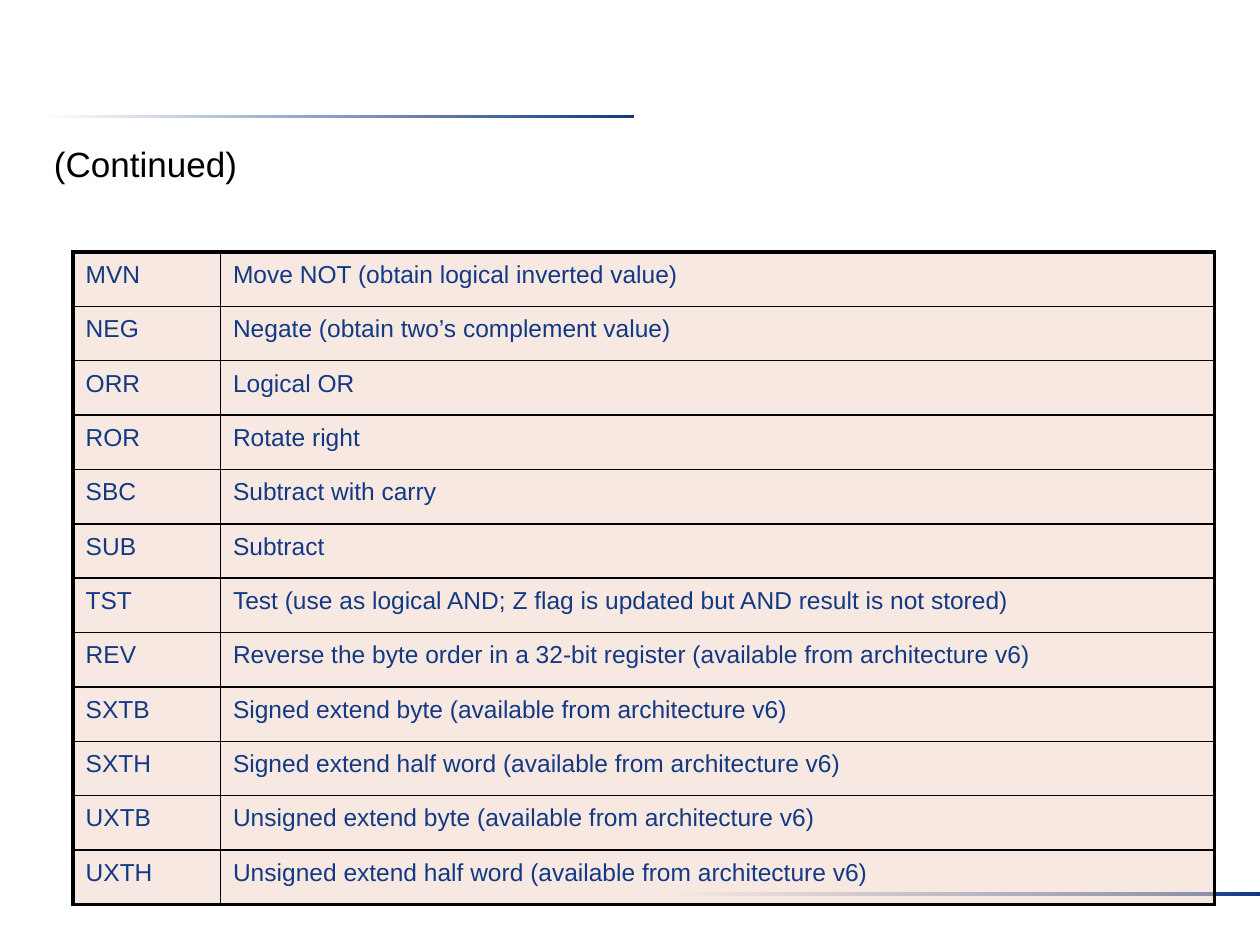
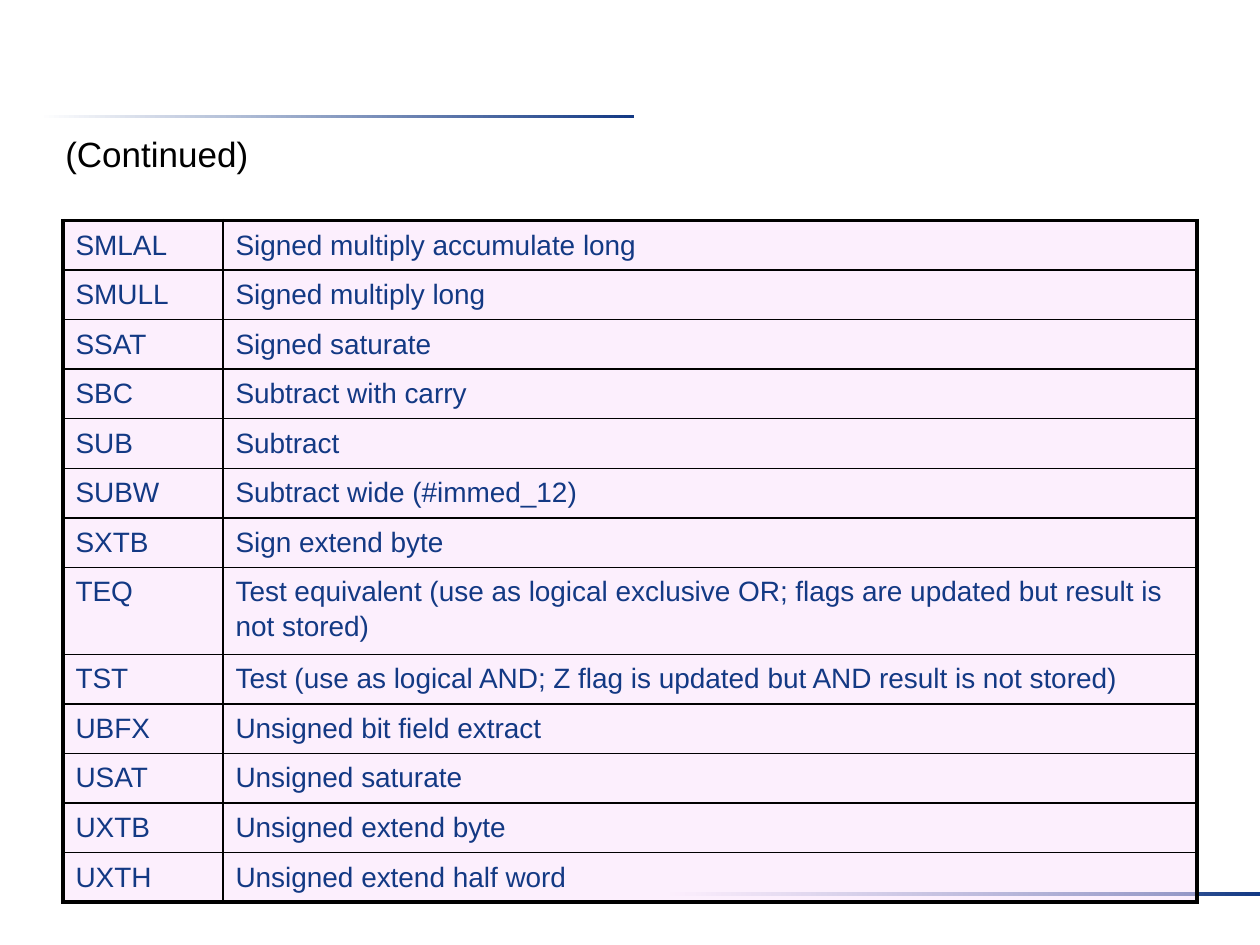
from lxml.etree import SubElement
from pptx import Presentation
from pptx.dml.color import RGBColor
from pptx.enum.shapes import MSO_SHAPE
from pptx.enum.text import MSO_AUTO_SIZE
from pptx.oxml.ns import qn
from pptx.util import Inches, Pt

# Shared look
NAVY, BLACK, WHITE = "133984", "000000", "FFFFFF"
FACE = "Arial"
THICK, THIN = 2.25, 1
BANDS = [(0.31, 0.91), (5.28, 7.08)]


def color(code):
    return RGBColor.from_string(code)


def style(para, size, code):
    look = {"name": FACE, "size": Pt(size)}
    for key, val in look.items():
        setattr(para.font, key, val)
    para.font.color.rgb = color(code)


# Content of each slide
PAGES = [
    {
        "label": (0.33, 1.08), "place": (0.58, 2), "cols": (1.17, 7.89),
        "size": 14, "tint": "F1D5C5", "height": 5.18, "tall": {},
        "rows": [
            ("MVN", "Move NOT (obtain logical inverted value)"),
            ("NEG", "Negate (obtain two’s complement value)"),
            ("ORR", "Logical OR"),
            ("ROR", "Rotate right"),
            ("SBC", "Subtract with carry"),
            ("SUB", "Subtract"),
            ("TST", "Test (use as logical AND; Z flag is updated "
                    "but AND result is not stored)"),
            ("REV", "Reverse the byte order in a 32-bit register "
                    "(available from architecture v6)"),
            ("SXTB", "Signed extend byte (available from architecture v6)"),
            ("SXTH", "Signed extend half word (available from architecture v6)"),
            ("UXTB", "Unsigned extend byte (available from architecture v6)"),
            ("UXTH", "Unsigned extend half word (available from architecture v6)"),
        ],
    },
    {
        "label": (0.42, 1), "place": (0.5, 1.75), "cols": (1.27, 7.73),
        "size": 16, "tint": "FBE0FC", "height": 5.4, "tall": {"TEQ": 0.69},
        "rows": [
            ("SMLAL", "Signed multiply accumulate long"),
            ("SMULL", "Signed multiply long"),
            ("SSAT", "Signed saturate"),
            ("SBC", "Subtract with carry"),
            ("SUB", "Subtract"),
            ("SUBW", "Subtract wide (#immed_12)"),
            ("SXTB", "Sign extend byte"),
            ("TEQ", "Test equivalent (use as logical exclusive OR; flags are "
                    "updated but result is not stored)"),
            ("TST", "Test (use as logical AND; Z flag is updated "
                    "but AND result is not stored)"),
            ("UBFX", "Unsigned bit field extract"),
            ("USAT", "Unsigned saturate"),
            ("UXTB", "Unsigned extend byte"),
            ("UXTH", "Unsigned extend half word"),
        ],
    },
]

deck = Presentation()
deck.slide_width, deck.slide_height = Inches(10), Inches(7.5)

for page in PAGES:
    slide = deck.slides.add_slide(deck.slide_layouts[6])

    # Fading bands above and below
    for left, top in BANDS:
        band = slide.shapes.add_shape(
            MSO_SHAPE.RECTANGLE, Inches(left), Inches(top), Inches(4.72), Inches(0.03))
        band.shadow.inherit = False
        band.line.fill.background()
        band.fill.gradient()
        band.fill.gradient_angle = 0
        for stop, code, spot in zip(band.fill.gradient_stops, (WHITE, NAVY), (0, 1)):
            stop.color.rgb = color(code)
            stop.position = spot

    # Label over the table, wide enough for one line
    left, top = page["label"]
    box = slide.shapes.add_textbox(Inches(left), Inches(top), Inches(1.7), Inches(0.43))
    box.text_frame.word_wrap = False
    box.text_frame.auto_size = MSO_AUTO_SIZE.SHAPE_TO_FIT_TEXT
    box.text_frame.text = "(Continued)"
    style(box.text_frame.paragraphs[0], 20, BLACK)

    # Table frame: plain rows share the height left by tall ones
    rows, tall = page["rows"], page["tall"]
    left, top = page["place"]
    table = slide.shapes.add_table(
        len(rows), 2, Inches(left), Inches(top),
        Inches(sum(page["cols"])), Inches(page["height"])).table
    table.first_row = table.horz_banding = False
    for col, width in zip(table.columns, page["cols"]):
        col.width = Inches(width)
    plain = (page["height"] - sum(tall.values())) / (len(rows) - len(tall))

    # Cells
    for r, row in enumerate(rows):
        table.rows[r].height = Inches(tall.get(row[0], plain))
        for c, text in enumerate(row):
            cell = table.cell(r, c)
            cell.text = text
            para = cell.text_frame.paragraphs[0]
            para.line_spacing = 1.1
            style(para, page["size"], NAVY)

            # Thick outer edges, thin inner ones
            props = cell._tc.get_or_add_tcPr()
            edges = {"L": c == 0, "R": c == 1, "T": r == 0, "B": r == len(rows) - 1}
            for side, outer in edges.items():
                width = Pt(THICK if outer else THIN)
                line = SubElement(props, qn("a:ln" + side), w=str(width))
                paint = SubElement(line, qn("a:solidFill"))
                SubElement(paint, qn("a:srgbClr"), val=BLACK)

            # Half clear tint
            cell.fill.solid()
            cell.fill.fore_color.rgb = color(page["tint"])
            tint = props.find(qn("a:solidFill")).find(qn("a:srgbClr"))
            SubElement(tint, qn("a:alpha"), val="50000")

deck.save("out.pptx")
